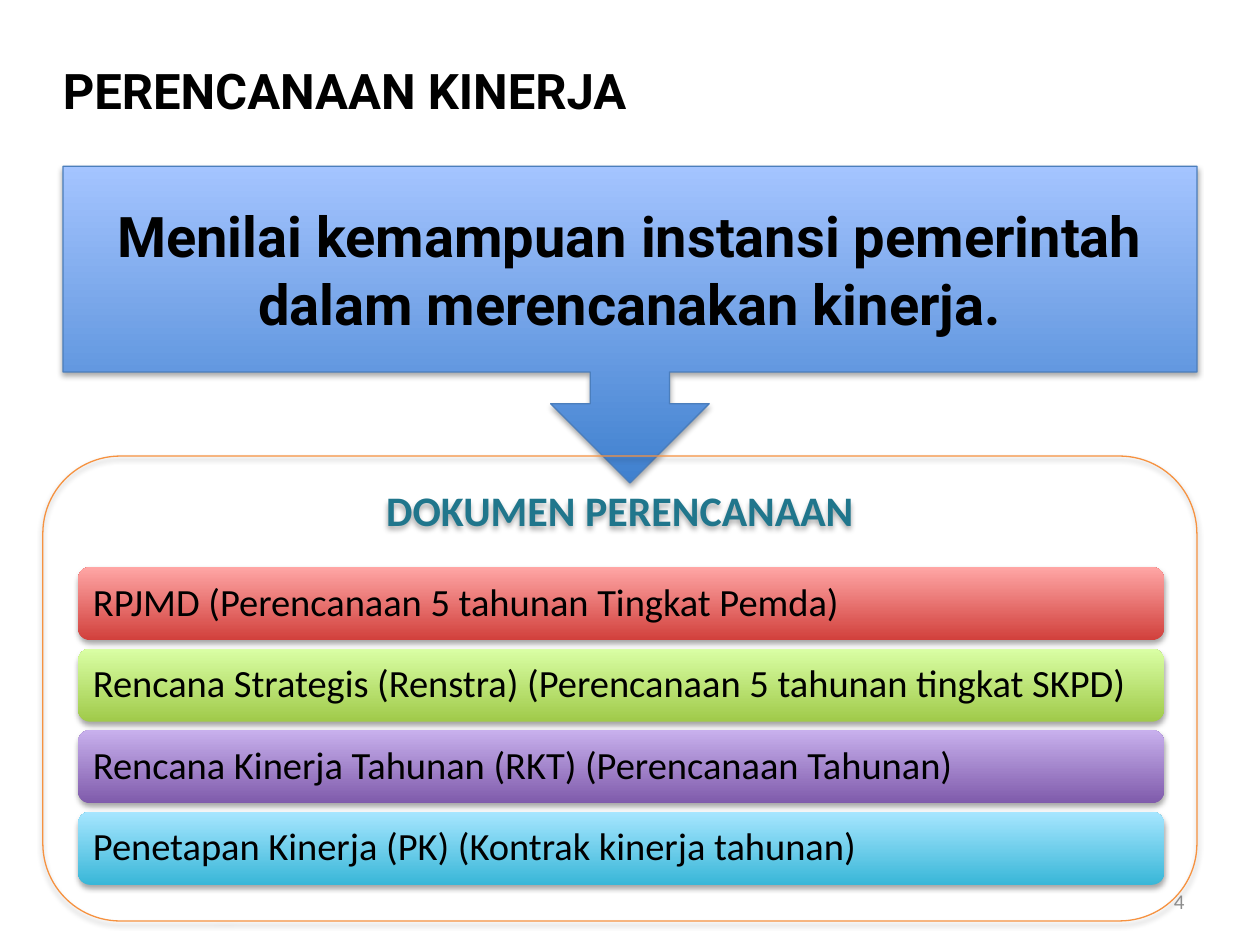
"""Build the performance planning slide."""
from lxml import etree
from pptx import Presentation
from pptx.dml import color
from pptx.enum import shapes, text
from pptx.oxml import ns
from pptx.util import Pt

COLORS = {
    "black": "000000", "teal": "20768C", "gray": "8C8C8C",
    "blue_line": "4B7EBC", "orange": "F69240",
    "blue": ("3F80CE", "A4C4FF"), "red": ("D1403C", "FFA6A5"),
    "green": ("A0CA4A", "DAFFA5"), "purple": ("7F5BAB", "C8B0ED"),
    "cyan": ("39B7D8", "A7E6FF"),
}
TITLE = {"name": "Roboto", "size": Pt(28), "bold": True}
MESSAGE = {"name": "Roboto", "size": Pt(32), "bold": True}
HEADING = {"name": "Calibri", "size": Pt(24), "bold": True}
ITEM = {"name": "Calibri", "size": Pt(22)}
NUMBER = {"name": "Calibri", "size": Pt(12)}
LEFT, CENTER, RIGHT = text.PP_ALIGN.LEFT, text.PP_ALIGN.CENTER, text.PP_ALIGN.RIGHT
MIDDLE, TOP = text.MSO_ANCHOR.MIDDLE, text.MSO_ANCHOR.TOP


def write(sp, words, font, ink="black", align=LEFT, anchor=MIDDLE):
    tf = sp.text_frame
    tf.word_wrap = True
    tf.vertical_anchor = anchor
    p = tf.paragraphs[0]
    p.alignment = align
    r = p.add_run()
    r.text = words
    for key, value in font.items():
        setattr(r.font, key, value)
    r.font.color.rgb = color.RGBColor.from_string(COLORS[ink])
    return p


def add_panel(kind, box, fill=None, line=None):
    sp = s.shapes.add_shape(kind, *map(Pt, box))
    if fill:
        sp.fill.gradient()
        sp.fill.gradient_angle = 90
        for stop, value in zip(sp.fill.gradient_stops, COLORS[fill]):
            stop.color.rgb = color.RGBColor.from_string(value)
    else:
        sp.fill.background()
    if line:
        sp.line.color.rgb = color.RGBColor.from_string(COLORS[line])
        sp.line.width = Pt(0.75)
    else:
        sp.line.fill.background()
    sp.shadow.inherit = False
    effects = sp.element.spPr.find(ns.qn("a:effectLst"))
    shadow = etree.SubElement(effects, ns.qn("a:outerShdw"), blurRad=str(Pt(3.1)),
                              dist=str(Pt(1.8)), dir="5400000", rotWithShape="0")
    ink = etree.SubElement(shadow, ns.qn("a:srgbClr"), val=COLORS["black"])
    etree.SubElement(ink, ns.qn("a:alpha"), val="35000")
    return sp


prs = Presentation()
prs.slide_width, prs.slide_height = Pt(720), Pt(540)
s = prs.slides.add_slide(prs.slide_layouts[6])

title = s.shapes.add_textbox(Pt(28.8), Pt(21.6), Pt(648), Pt(59.8))
write(title, "PERENCANAAN KINERJA", TITLE)

callout = add_panel(shapes.MSO_SHAPE.DOWN_ARROW_CALLOUT, (36, 95, 648, 181), "blue", "blue_line")
write(callout, "Menilai kemampuan instansi pemerintah dalam merencanakan kinerja.",
      MESSAGE, align=CENTER)

frame = add_panel(shapes.MSO_SHAPE.ROUNDED_RECTANGLE, (24.5, 260.6, 659.5, 265.7), line="orange")
write(frame, "DOKUMEN PERENCANAAN", HEADING, "teal", CENTER, TOP)

documents = [
    ("red", "RPJMD (Perencanaan 5 tahunan Tingkat Pemda)"),
    ("green", "Rencana Strategis (Renstra) (Perencanaan 5 tahunan tingkat SKPD)"),
    ("purple", "Rencana Kinerja Tahunan (RKT) (Perencanaan Tahunan)"),
    ("cyan", "Penetapan Kinerja (PK) (Kontrak kinerja tahunan)"),
]
for i, (fill, words) in enumerate(documents):
    bar = add_panel(shapes.MSO_SHAPE.ROUNDED_RECTANGLE, (44.6, 324 + 46.6 * i, 620.6, 41.8), fill)
    for side in ("left", "right", "top", "bottom"):
        setattr(bar.text_frame, f"margin_{side}", Pt(6.5))
    write(bar, words, ITEM).line_spacing = 0.9

number = s.shapes.add_textbox(Pt(516), Pt(500.5), Pt(168), Pt(28.8))
write(number, "4", NUMBER, "gray", RIGHT)

prs.save("out.pptx")
